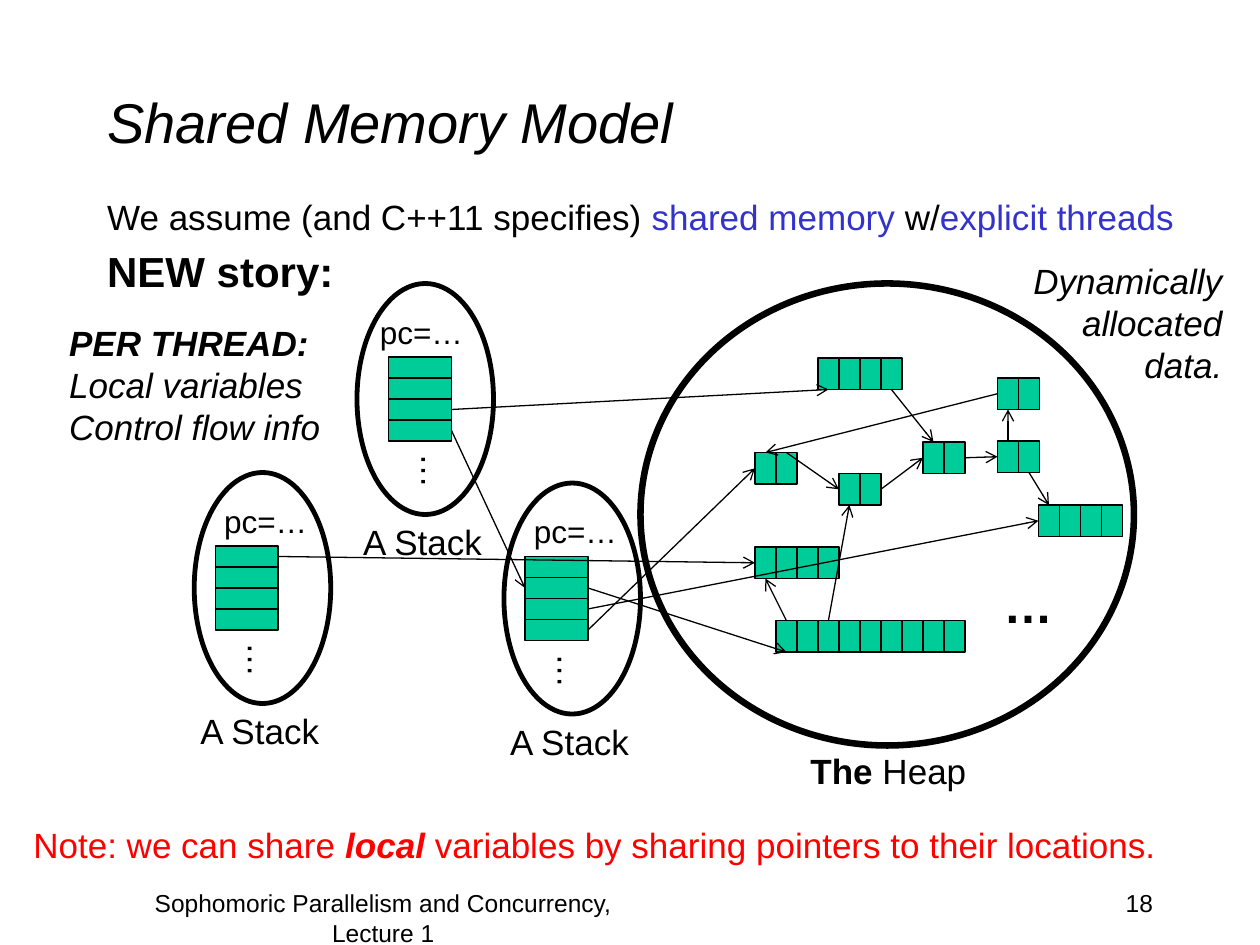
from pptx import Presentation
from pptx import util as u
from pptx.dml.color import RGBColor
from pptx.enum import shapes, text
from pptx.oxml.ns import qn
from lxml import etree

COLORS = {"black": "000000", "blue": "3333CC", "red": "FF0000", "cell": "00CC99", "white": "FFFFFF"}
COLUMNS, ROWS = 60, 45
TOP, LEFT, BOTTOM, RIGHT = range(4)
ALIGN = text.PP_ALIGN


def color(name):
    return RGBColor.from_string(COLORS[name])


def write(para, words, size=20, ink="black", bold=False, italic=False):
    span = para.add_run()
    span.text = words
    font = span.font
    font.name, font.size, font.bold, font.italic = "Arial", u.Pt(size), bold, italic
    font.color.rgb = color(ink)


class Sketch:
    """Holds the drawing style and the slide being filled, measured on a 60 by 45 grid."""

    def __init__(self, deck):
        self.slide = deck.slides.add_slide(deck.slide_layouts[1])
        self.column = deck.slide_width / COLUMNS
        self.row = deck.slide_height / ROWS
        self.blocks = {}

    def area(self, left, top, width, height):
        return (round(left * self.column), round(top * self.row),
                round(width * self.column), round(height * self.row))

    def place(self, item, *area):
        item.left, item.top, item.width, item.height = self.area(*area)

    def title(self, words, *area):
        box = self.slide.shapes.title
        self.place(box, *area)
        box.text_frame.vertical_anchor = text.MSO_ANCHOR.MIDDLE
        para = box.text_frame.paragraphs[0]
        para.alignment = ALIGN.LEFT
        write(para, words, size=32, italic=True)

    def body(self, lines, *area):
        box = self.slide.placeholders[1]
        self.place(box, *area)
        frame = box.text_frame
        frame.auto_size = text.MSO_AUTO_SIZE.NONE
        for index, spans in enumerate(lines):
            para = frame.add_paragraph() if index else frame.paragraphs[0]
            para.space_before = u.Pt(0.2 * spans[0][1].get("size", 20))
            props = para._p.get_or_add_pPr()
            props.set("marL", str(u.Inches(0.38)))
            props.set("indent", str(-u.Inches(0.38)))
            etree.SubElement(props, qn("a:buNone"))
            for words, style in spans:
                write(para, words, **style)

    def label(self, spans, *area, align=ALIGN.LEFT, wrap=False, grow=True, turn=0, fill=None):
        box = self.slide.shapes.add_textbox(*self.area(*area))
        box.rotation = turn
        if fill:
            box.fill.solid()
            box.fill.fore_color.rgb = color(fill)
        frame = box.text_frame
        frame.word_wrap = wrap
        frame.auto_size = text.MSO_AUTO_SIZE.SHAPE_TO_FIT_TEXT if grow else text.MSO_AUTO_SIZE.NONE
        para = frame.paragraphs[0]
        para.alignment = align
        for words, style in spans:
            for index, line in enumerate(words.split("\n")):
                if index:
                    para.add_line_break()
                if line:
                    write(para, line, **style)

    def outline(self, kind, *area, weight, fill=None):
        shape = self.slide.shapes.add_shape(kind, *self.area(*area))
        shape.shadow.inherit = False
        shape.line.color.rgb = color("black")
        shape.line.width = u.Pt(weight)
        if fill:
            shape.fill.solid()
            shape.fill.fore_color.rgb = color(fill)
        else:
            shape.fill.background()
        return shape

    def oval(self, *area, weight):
        self.outline(shapes.MSO_SHAPE.OVAL, *area, weight=weight)

    def block(self, name, left, top, count, size=(1, 1.5), step=(1, 0)):
        self.blocks[name] = [
            self.outline(shapes.MSO_SHAPE.RECTANGLE, left + index * step[0], top + index * step[1],
                         *size, weight=0.75, fill="cell")
            for index in range(count)]

    def stack(self, name, oval, cells, counter_shift):
        left, top = oval
        column, row = cells
        self.oval(left, top, 6.5, 11, weight=2.75)
        self.block(name, column, row, 4, size=(3, 1), step=(0, 1))
        self.label([("pc=…", {"size": 18})], column + counter_shift, row - 2.4, 5.2, 2.4)
        self.label([("…", {})], column + 0.75, row + 4.15, 2.9, 2.64, turn=90)
        self.label([("A Stack", {})], left - 0.3, top + 11, 7, 2.64)

    def arrow(self, start, end):
        line = self.slide.shapes.add_connector(shapes.MSO_CONNECTOR.STRAIGHT, 0, 0, 0, 0)
        for join, (name, index, side) in ((line.begin_connect, start), (line.end_connect, end)):
            join(self.blocks[name][index], side)
        line.line.color.rgb = color("black")
        line.line.width = u.Pt(0.75)
        props = line._element.spPr
        etree.SubElement(props.find(qn("a:ln")), qn("a:tailEnd"), type="arrow")
        etree.SubElement(props, qn("a:effectLst"))


HEAP_BLOCKS = {
    "pair west": (35.95, 21.55, 2), "four south": (35.95, 26.05, 4),
    "pair centre": (39.95, 22.55, 2), "pair east": (43.95, 21.05, 2),
    "four north": (38.95, 17.05, 4), "four east": (49.45, 24.05, 4),
    "nine": (36.95, 29.55, 9), "pair low": (47.5, 21, 2), "pair high": (47.5, 18, 2),
}
STACKS = {
    "stack top": ((17, 13.5), (18.5, 17), -1),
    "stack left": ((9.25, 22.5), (10.25, 26), -0.17),
    "stack right": ((24, 23), (25, 26.5), -0.17),
}
ARROWS = [
    (("four north", 3, BOTTOM), ("pair east", 0, TOP)),
    (("pair west", 1, TOP), ("pair centre", 0, LEFT)),
    (("pair centre", 1, RIGHT), ("pair east", 0, LEFT)),
    (("nine", 0, TOP), ("four south", 0, BOTTOM)),
    (("nine", 2, TOP), ("pair centre", 0, BOTTOM)),
    (("stack top", 3, RIGHT), ("stack right", 1, LEFT)),
    (("stack top", 2, RIGHT), ("four north", 0, BOTTOM)),
    (("stack left", 0, RIGHT), ("four south", 0, LEFT)),
    (("stack right", 1, RIGHT), ("nine", 0, BOTTOM)),
    (("stack right", 3, RIGHT), ("pair west", 0, LEFT)),
    (("stack right", 2, RIGHT), ("four east", 0, LEFT)),
    (("pair east", 1, RIGHT), ("pair low", 0, LEFT)),
    (("pair low", 0, TOP), ("pair high", 0, BOTTOM)),
    (("pair high", 0, LEFT), ("pair west", 0, TOP)),
    (("pair low", 1, BOTTOM), ("four east", 0, TOP)),
]


def main():
    deck = Presentation()
    deck.slide_width, deck.slide_height = u.Inches(10), u.Inches(7.5)
    sketch = Sketch(deck)
    sketch.title("Shared Memory Model", 4.5, 2, 51, 7.5)
    sketch.body([
        [("We assume (and C++11 specifies) ", {}), ("shared memory", {"ink": "blue"}),
         (" w/", {}), ("explicit threads", {"ink": "blue"})],
        [("NEW story:", {"size": 24, "bold": True})],
    ], 4.5, 9, 53, 31.5)
    sketch.label([("18", {"size": 14})], 43, 42, 12.5, 3, align=ALIGN.RIGHT, wrap=True, grow=False)
    sketch.label([("Sophomoric Parallelism and Concurrency, Lecture 1", {"size": 14})],
                 5, 42, 26.5, 3, align=ALIGN.CENTER, wrap=True, grow=False)
    sketch.label([("The", {"bold": True}), (" Heap", {})], 38, 35.4, 8.7, 2.64)
    sketch.label([("Dynamically allocated data.", {"italic": True})],
                 47.5, 12.05, 11.3, 6.65, align=ALIGN.RIGHT, wrap=True)
    sketch.oval(30.5, 13.5, 23.5, 22, weight=3.75)
    for name, spot in HEAP_BLOCKS.items():
        sketch.block(name, *spot)
    sketch.label([("…", {"size": 28, "bold": True})], 47.2, 27.05, 3.55, 3.4)
    for name, spot in STACKS.items():
        sketch.stack(name, *spot)
    for start, end in ARROWS:
        sketch.arrow(start, end)
    sketch.label([("PER THREAD:\n", {"bold": True, "italic": True}),
                  ("Local variables \nControl flow info", {"italic": True})], 2.7, 15, 13.25, 6.65)
    red = {"ink": "red"}
    sketch.label([("Note: we can share ", red), ("local", {"ink": "red", "bold": True, "italic": True}),
                  (" variables by sharing pointers to their locations.", red)],
                 1, 38.9, 57, 2.64, wrap=True, fill="white")
    deck.save("out.pptx")


if __name__ == "__main__":
    main()
